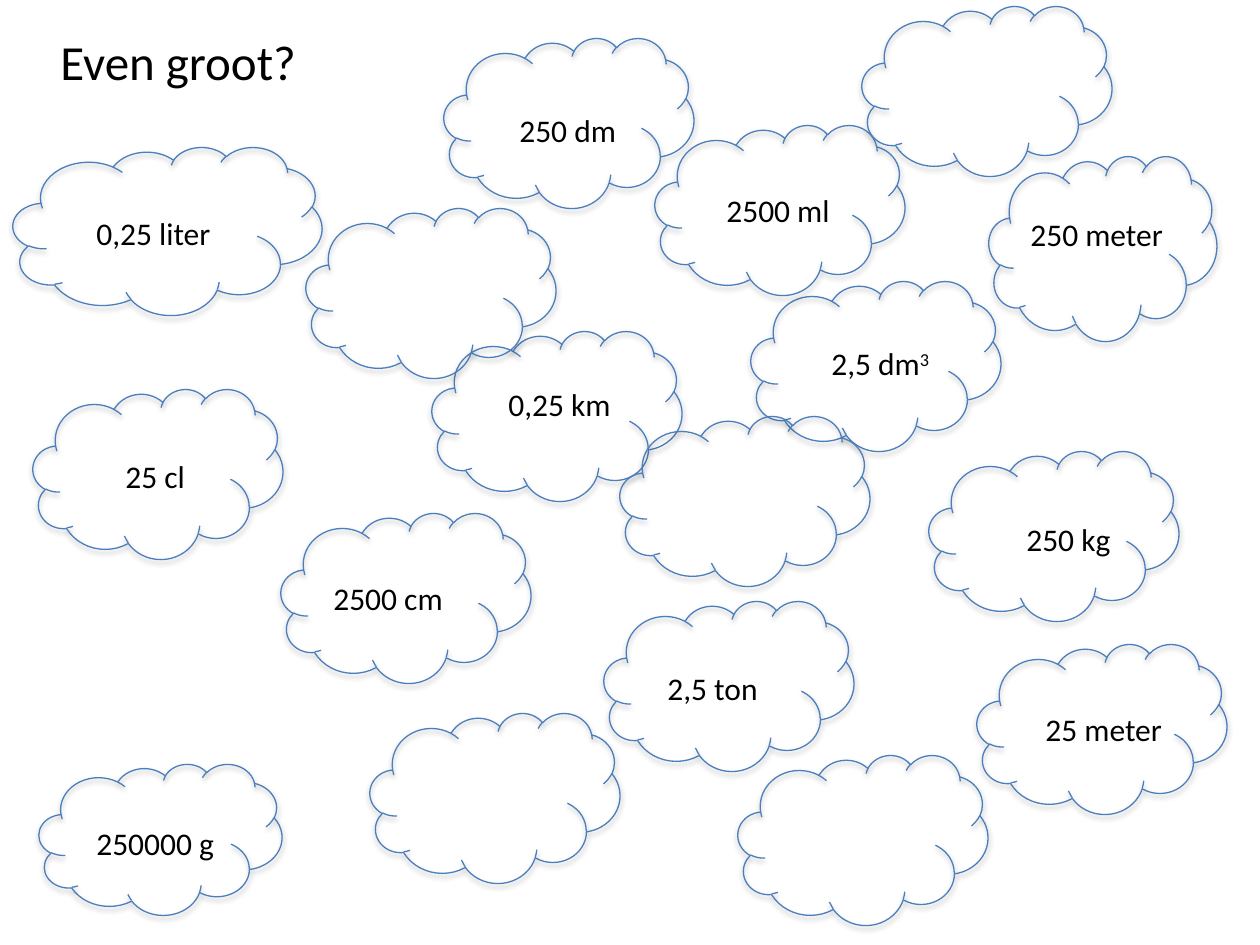
from lxml.etree import SubElement
from pptx import Presentation
from pptx.dml.color import RGBColor
from pptx.enum.shapes import MSO_SHAPE
from pptx.enum.text import MSO_AUTO_SIZE
from pptx.oxml.ns import qn
from pptx.util import Pt

PX = 914400 / 126
FONT = "Calibri"
HUES = {"line": "4B7EBC", "text": "000000", "shade": "000000"}
SIZE = (250, 170)

TITLE = ("Even groot?", (48, 25, 273, 72))
CLOUDS = [
    (39, 764, 243, 151),
    (444, 38),
    (989, 156, 228, 185),
    (13, 147, 309, 168),
    (604, 601),
    (432, 331),
    (929, 451),
    (33, 389),
    (281, 513),
    (977, 644),
    (738, 755),
    (751, 281),
    (620, 416),
    (306, 208),
    (862, 6),
    (370, 713),
    (655, 125),
]
LABELS = [
    ("0,25 liter", "", (84, 208, 141)),
    ("25 cl", "", (113, 451, 86)),
    ("2,5 ton", "", (655, 663, 117)),
    ("250 kg", "", (1014, 514, 111)),
    ("250000 g", "", (84, 818, 190)),
    ("0,25 km", "", (496, 379, 129)),
    ("250 meter", "", (1018, 209, 160)),
    ("25 meter", "", (1033, 704, 144)),
    ("250 dm", "", (507, 105, 123)),
    ("2,5 dm", "3", (819, 338, 126)),
    ("2500 ml", "", (714, 185, 130)),
    ("2500 cm", "", (321, 573, 136)),
]


def emu(*nums):
    return [round(n * PX) for n in nums]


def add_text(slide, text, box, size=18, wrap=False, power=""):
    shape = slide.shapes.add_textbox(*emu(*box))
    frame = shape.text_frame
    frame.word_wrap = wrap
    frame.auto_size = MSO_AUTO_SIZE.SHAPE_TO_FIT_TEXT
    for part in filter(None, (text, power)):
        run = frame.paragraphs[0].add_run()
        run.text = part
        run.font.name = FONT
        run.font.size = Pt(size)
        run.font.color.rgb = RGBColor.from_string(HUES["text"])
    if power:
        run.font._element.set("baseline", "30000")


def add_shade(shape):
    shape.shadow.inherit = False
    list_ = shape._element.spPr.find(qn("a:effectLst"))
    shade = SubElement(list_, qn("a:outerShdw"), blurRad="40000",
                       dist="23000", dir="5400000", rotWithShape="0")
    hue = SubElement(shade, qn("a:srgbClr"), val=HUES["shade"])
    SubElement(hue, qn("a:alpha"), val="35000")


def add_cloud(slide, left, top, width=SIZE[0], height=SIZE[1]):
    box = emu(left, top, width, height)
    cloud = slide.shapes.add_shape(MSO_SHAPE.CLOUD, *box)
    cloud.fill.background()
    cloud.line.color.rgb = RGBColor.from_string(HUES["line"])
    cloud.line.width = Pt(0.75)
    add_shade(cloud)


def main():
    deck = Presentation()
    deck.slide_width, deck.slide_height = emu(1260, 945)
    slide = deck.slides.add_slide(deck.slide_layouts[6])
    for cloud in CLOUDS:
        add_cloud(slide, *cloud)
    add_text(slide, *TITLE, size=28, wrap=True)
    for text, power, box in LABELS:
        add_text(slide, text, (*box, 50), power=power)
    deck.save("out.pptx")


if __name__ == "__main__":
    main()
